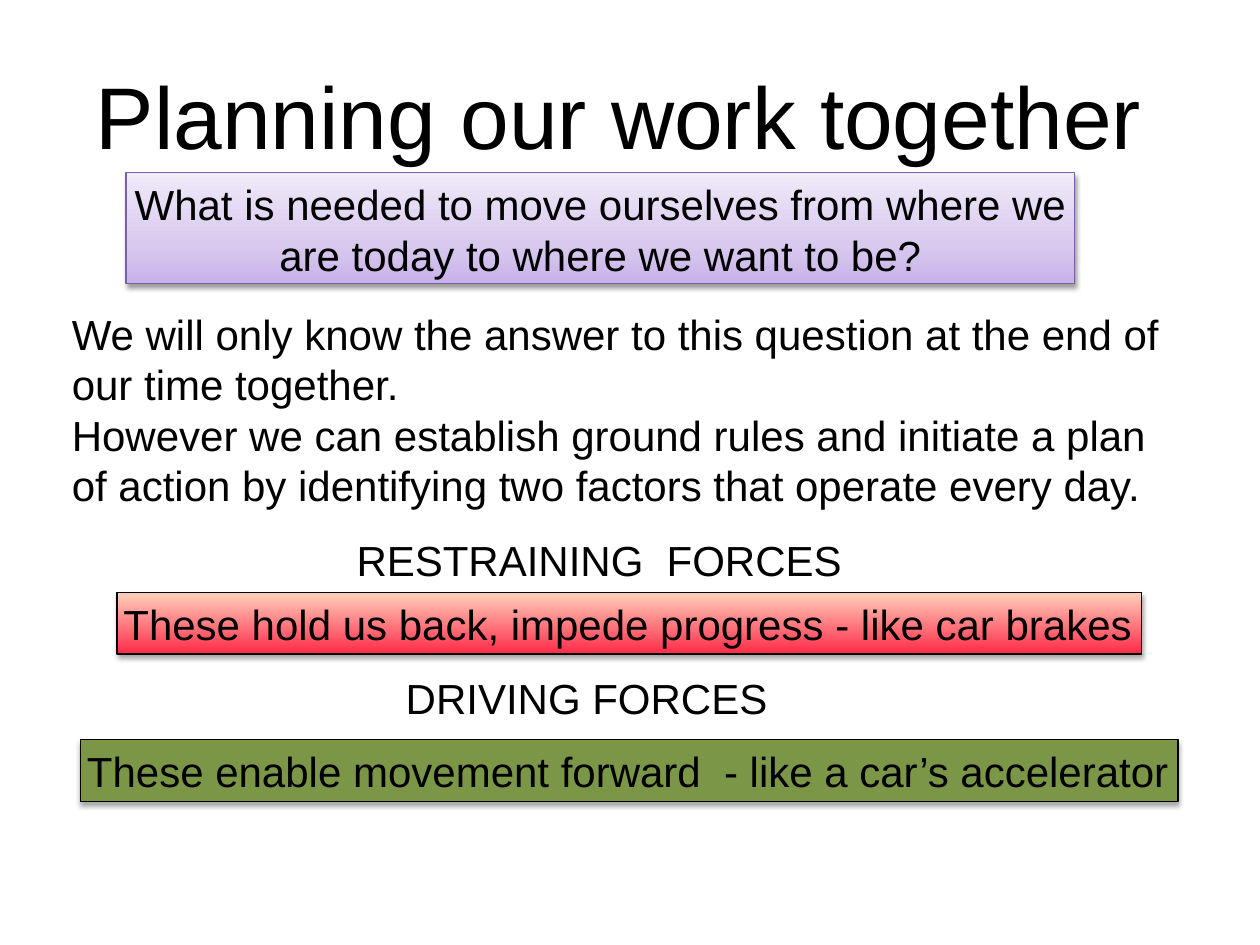
from dataclasses import dataclass
from typing import Optional

from lxml import etree
from pptx import Presentation
from pptx import util as u
from pptx.dml.color import RGBColor
from pptx.enum import shapes, text
from pptx.oxml.ns import qn

PX = 9144  # 100 px to the inch


@dataclass(frozen=True)
class Theme:
    font: str = "Arial"
    ink: str = "000000"
    violet: str = "7D60A0"
    green: str = "7C9647"
    lilac: tuple = ((0, "C8B2E9"), (35, "D8C9EE"), (100, "F0EAF9"))
    red: tuple = ((0, "FF2B49"), (100, "FFD1BB"))
    head: int = 50
    body: int = 24
    inset: int = 5


@dataclass(frozen=True)
class Box:
    left: int
    top: int
    width: int
    height: int

    def emu(self) -> list:
        return [n * PX for n in (self.left, self.top, self.width, self.height)]


@dataclass(frozen=True)
class Panel:
    box: Box
    words: str
    stops: tuple
    edge: str = "000000"
    wrap: bool = False
    align: text.PP_ALIGN = text.PP_ALIGN.LEFT
    depth: float = 1.8
    alpha: int = 35


@dataclass(frozen=True)
class Note:
    box: Box
    words: str
    wrap: bool = False


T = Theme()

PANELS = [
    Panel(Box(100, 137, 753, 88),
          "What is needed to move ourselves from where we are today "
          "to where we want to be?",
          T.lilac, T.violet, True, text.PP_ALIGN.CENTER, 1.6, 38),
    Panel(Box(93, 470, 813, 49),
          "These hold us back, impede progress - like car brakes", T.red),
    Panel(Box(64, 587, 871, 49),
          "These enable movement forward  - like a car’s accelerator",
          ((0, T.green),)),
]

NOTES = [
    Note(Box(52, 240, 896, 164),
         "We will only know the answer to this question at the end of our "
         "time together.\nHowever we can establish ground rules and initiate "
         "a plan of action by identifying two factors that operate every day.",
         True),
    Note(Box(278, 419, 397, 48), "RESTRAINING  FORCES"),
    Note(Box(317, 529, 298, 48), "DRIVING FORCES"),
]


def write(shape, words: str, size: int, wrap: bool,
          align: text.PP_ALIGN = text.PP_ALIGN.LEFT) -> None:
    frame = shape.text_frame
    frame.text = words
    frame.word_wrap = wrap
    frame.auto_size = text.MSO_AUTO_SIZE.SHAPE_TO_FIT_TEXT
    frame.vertical_anchor = text.MSO_ANCHOR.TOP
    frame.margin_left = frame.margin_right = T.inset * PX
    frame.margin_top = frame.margin_bottom = T.inset * PX
    for para in frame.paragraphs:
        para.alignment = align
        for run in para.runs:
            run.font.name = T.font
            run.font.size = u.Pt(size)
            run.font.color.rgb = RGBColor.from_string(T.ink)


def tint(node, color: str):
    return etree.SubElement(node, qn("a:srgbClr"), val=color)


def blend(shape, stops: tuple) -> None:
    """Fill with one colour, or with a gradient that rises from the base."""
    if len(stops) == 1:
        shape.fill.solid()
        shape.fill.fore_color.rgb = RGBColor.from_string(stops[0][1])
        return
    shape.fill.gradient()
    shape.fill.gradient_angle = 90
    row = shape.element.spPr.find(".//" + qn("a:gsLst"))
    for old in list(row):
        row.remove(old)
    for pos, color in stops:
        tint(etree.SubElement(row, qn("a:gs"), pos=str(pos * 1000)), color)


def shade(shape, depth: float, alpha: int) -> None:
    """Cast a soft shadow straight down."""
    shape.shadow.inherit = False
    node = shape.element.spPr.find(qn("a:effectLst"))
    cast = etree.SubElement(
        node, qn("a:outerShdw"), blurRad=str(u.Pt(3)),
        dist=str(u.Pt(depth)), dir="5400000", rotWithShape="0")
    etree.SubElement(tint(cast, T.ink), qn("a:alpha"), val=str(alpha * 1000))


def add_panel(slide, panel: Panel) -> None:
    shape = slide.shapes.add_shape(
        shapes.MSO_SHAPE.RECTANGLE, *panel.box.emu())
    blend(shape, panel.stops)
    shape.line.color.rgb = RGBColor.from_string(panel.edge)
    shape.line.width = u.Pt(0.75)
    shade(shape, panel.depth, panel.alpha)
    write(shape, panel.words, T.body, panel.wrap, panel.align)


def add_note(slide, note: Note) -> None:
    shape = slide.shapes.add_textbox(*note.box.emu())
    write(shape, note.words, T.body, note.wrap)


def main() -> None:
    deck = Presentation()
    deck.slide_width, deck.slide_height = 1000 * PX, 750 * PX
    slide = deck.slides.add_slide(deck.slide_layouts[5])

    # Title
    title = slide.shapes.title
    title.left, title.top, title.width, title.height = Box(
        71, 44, 858, 88).emu()
    write(title, "Planning our work together", T.head, True)

    # Coloured panels and plain text
    for panel in PANELS:
        add_panel(slide, panel)
    for note in NOTES:
        add_note(slide, note)

    deck.save("out.pptx")


if __name__ == "__main__":
    main()
